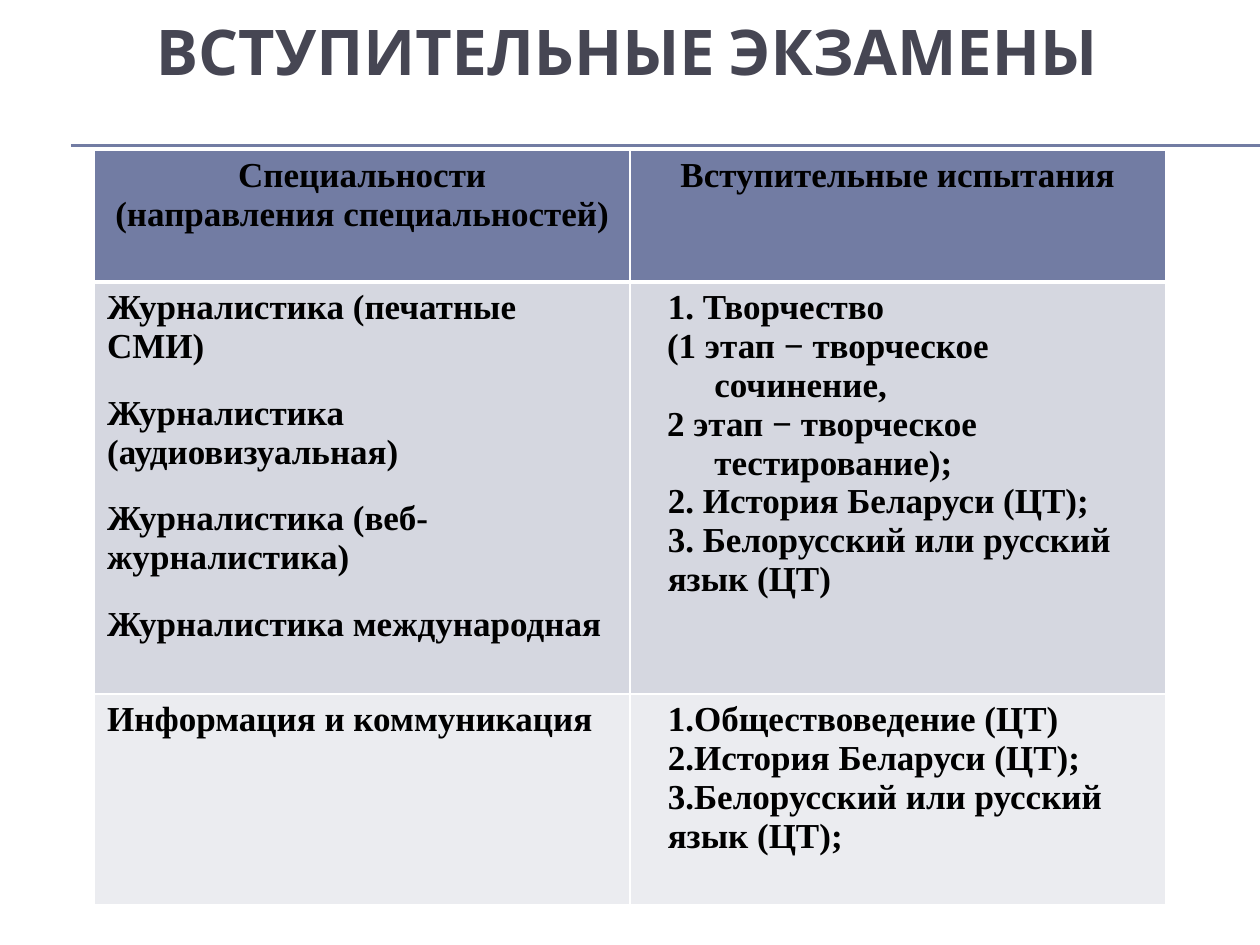
from lxml.etree import SubElement
from pptx import Presentation
from pptx.dml.color import RGBColor
from pptx.enum.shapes import MSO_CONNECTOR
from pptx.enum.text import MSO_ANCHOR, PP_ALIGN
from pptx.oxml.ns import qn
from pptx.util import Pt

TITLE = "ВСТУПИТЕЛЬНЫЕ ЭКЗАМЕНЫ"
HEADER = {"align": PP_ALIGN.CENTER}
SPACED = {"before": 16}
PLAIN = {}
ITEM = {"left": 14.4}
STAGE = {"left": 41, "indent": -27}
ROWS = [
    (75.5, "727CA3", 3, [
        [("Специальности", HEADER), ("(направления специальностей)", HEADER)],
        [("Вступительные испытания", HEADER)],
    ]),
    (235.5, "D5D7E0", 1, [
        [("Журналистика (печатные СМИ)", SPACED),
         ("Журналистика (аудиовизуальная)", SPACED),
         ("Журналистика (веб-журналистика)", SPACED),
         ("Журналистика международная", SPACED)],
        [("1. Творчество", ITEM),
         ("(1 этап − творческое сочинение,", STAGE),
         ("2 этап − творческое тестирование);", STAGE),
         ("2. История Беларуси (ЦТ);", ITEM),
         ("3. Белорусский или русский язык (ЦТ)", ITEM)],
    ]),
    (120.5, "EBECF0", 1, [
        [("Информация и коммуникация", PLAIN)],
        [("1.Обществоведение (ЦТ)", ITEM),
         ("2.История Беларуси (ЦТ);", ITEM),
         ("3.Белорусский или русский язык (ЦТ);", ITEM)],
    ]),
]
TABLE_LEFT, TABLE_TOP, COLUMN_WIDTH = 54, 85.7, 306
RULE_LEFT, RULE_TOPS = 40.5, (82.8, 83.5)
SLIDE_WIDTH, SLIDE_HEIGHT = 720, 540


def color(value):
    return RGBColor.from_string(value)


def set_attrs(target, values):
    for name, value in values.items():
        setattr(target, name, value)


def add_text(p, text, font, size, fill):
    r = p.add_run()
    r.text = text
    set_attrs(r.font, {"name": font, "size": Pt(size), "bold": True})
    r.font.color.rgb = color(fill)


def add_rule(slide, top):
    line = slide.shapes.add_connector(
        MSO_CONNECTOR.STRAIGHT, Pt(RULE_LEFT), Pt(top), Pt(SLIDE_WIDTH), Pt(top))
    line.line.color.rgb = color("727CA3")
    line.line.width = Pt(0.75)
    SubElement(line._element.spPr, qn("a:effectLst"))


def set_borders(cell, top, bottom):
    tcPr = cell._tc.get_or_add_tcPr()
    for side, width in (("L", 1), ("R", 1), ("T", top), ("B", bottom)):
        ln = SubElement(tcPr, qn(f"a:ln{side}"), w=str(Pt(width)))
        SubElement(SubElement(ln, qn("a:solidFill")), qn("a:srgbClr"), val="FFFFFF")


def fill_cell(cell, paragraphs):
    tf = cell.text_frame
    for i, (text, style) in enumerate(paragraphs):
        p = tf.add_paragraph() if i else tf.paragraphs[0]
        set_attrs(p, {"alignment": style.get("align", PP_ALIGN.LEFT),
                      "space_before": Pt(style.get("before", 0))})
        pPr = p._p.get_or_add_pPr()
        pPr.set("marL", str(Pt(style.get("left", 0))))
        pPr.set("indent", str(Pt(style.get("indent", 0))))
        add_text(p, text, "Times New Roman", 20, "000000")


def add_exam_table(slide):
    height = sum(row[0] for row in ROWS)
    table = slide.shapes.add_table(
        len(ROWS), 2, Pt(TABLE_LEFT), Pt(TABLE_TOP),
        Pt(2 * COLUMN_WIDTH), Pt(height)).table
    for column in table.columns:
        column.width = Pt(COLUMN_WIDTH)
    top = 1
    for i, (row_height, fill, bottom, cells) in enumerate(ROWS):
        table.rows[i].height = Pt(row_height)
        for j, paragraphs in enumerate(cells):
            cell = table.cell(i, j)
            set_borders(cell, top, bottom)
            cell.fill.solid()
            cell.fill.fore_color.rgb = color(fill)
            fill_cell(cell, paragraphs)
        top = bottom


def main():
    prs = Presentation()
    set_attrs(prs, {"slide_width": Pt(SLIDE_WIDTH), "slide_height": Pt(SLIDE_HEIGHT)})
    s = prs.slides.add_slide(prs.slide_layouts[5])
    for top in RULE_TOPS:
        add_rule(s, top)
    title = s.shapes.title
    set_attrs(title, {"left": Pt(36), "top": Pt(7), "width": Pt(684), "height": Pt(76)})
    tf = title.text_frame
    set_attrs(tf, {"margin_left": Pt(53), "margin_top": 0, "margin_bottom": 0,
                   "word_wrap": True, "vertical_anchor": MSO_ANCHOR.TOP})
    p = tf.paragraphs[0]
    p.alignment = PP_ALIGN.LEFT
    add_text(p, TITLE, "Cabin", 36, "464653")
    add_exam_table(s)
    prs.save("out.pptx")


if __name__ == "__main__":
    main()
